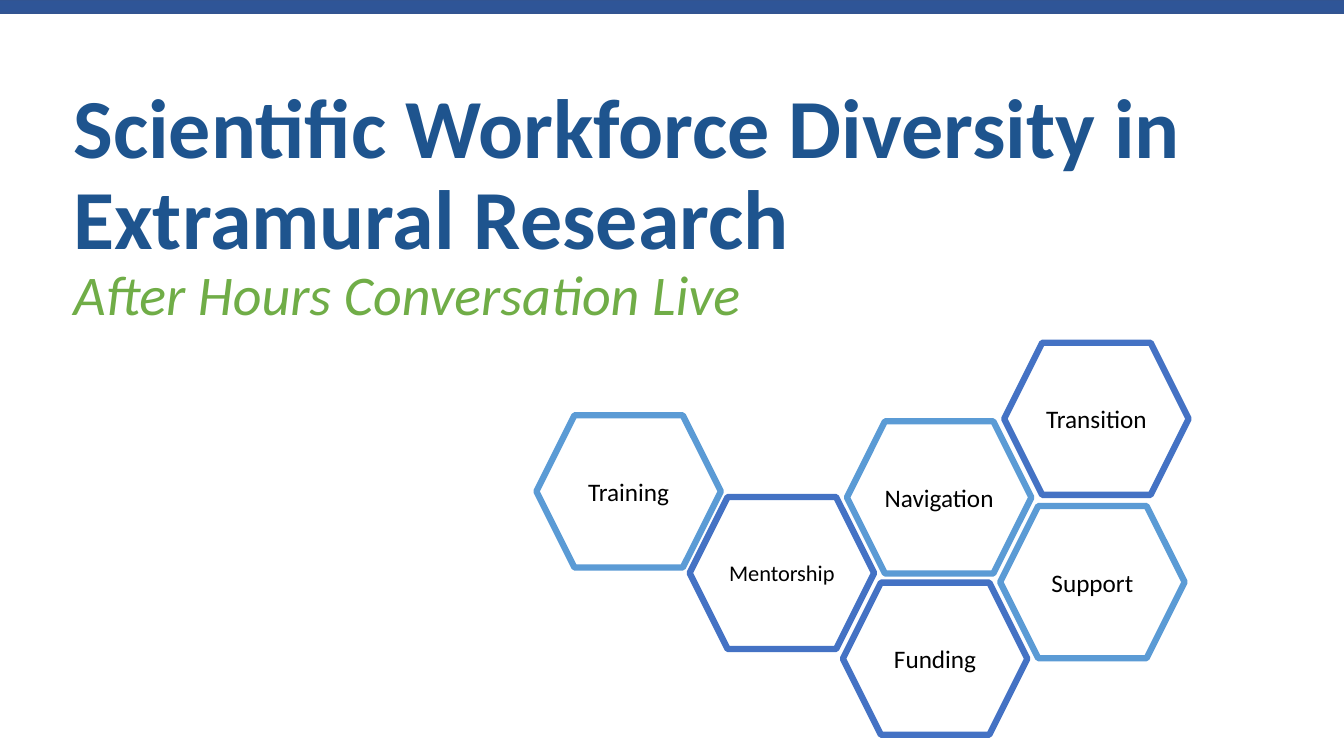
import pptx
import pptx.dml.color
import pptx.enum.shapes
import pptx.enum.text
import pptx.util

Inches, Pt = pptx.util.Inches, pptx.util.Pt
RGBColor = pptx.dml.color.RGBColor
MSO_SHAPE = pptx.enum.shapes.MSO_SHAPE
MSO_ANCHOR = pptx.enum.text.MSO_ANCHOR

BAND_FILL = RGBColor(0x2F, 0x55, 0x97)
BAND_LINE = RGBColor(0x32, 0x54, 0x91)
TITLE_BLUE = RGBColor(0x1E, 0x54, 0x8E)
GREEN = RGBColor(0x70, 0xAD, 0x47)
LIGHT_BLUE = RGBColor(0x5B, 0x9B, 0xD5)
DARK_BLUE = RGBColor(0x44, 0x72, 0xC4)
WHITE = RGBColor(0xFF, 0xFF, 0xFF)
BLACK = RGBColor(0, 0, 0)

prs = pptx.Presentation()
prs.slide_width, prs.slide_height = Inches(13.33), Inches(7.5)
s = prs.slides.add_slide(prs.slide_layouts[6])

# Band along the top edge
band = s.shapes.add_shape(MSO_SHAPE.RECTANGLE, Inches(-0.02), Inches(0),
                          Inches(13.39), Inches(0.13))
band.shadow.inherit = False
band.fill.solid()
band.fill.fore_color.rgb = BAND_FILL
band.line.color.rgb = BAND_LINE
band.line.width = Pt(1)

# Title and subtitle, one paragraph with a line break
title = s.shapes.add_textbox(Inches(0.63), Inches(0.58), Inches(11.31), Inches(2.72))
tf = title.text_frame
tf.word_wrap = True
tf.vertical_anchor = MSO_ANCHOR.BOTTOM
p = tf.paragraphs[0]
p.text = "Scientific Workforce Diversity in Extramural Research\vAfter Hours Conversation Live"
p.line_spacing = 0.9
main_run, subtitle_run = p.runs
for r, size, color in ((main_run, 60, TITLE_BLUE), (subtitle_run, 40, GREEN)):
    r.font.name = "Calibri"
    r.font.size = Pt(size)
    r.font.color.rgb = color
main_run.font.bold = True
subtitle_run.font.italic = True

# Honeycomb of topics: label, left, top, outline, text size
topics = [
    ("Training", 5.32, 4.12, LIGHT_BLUE, 18),
    ("Mentorship", 6.84, 4.93, DARK_BLUE, 16),
    ("Support", 9.92, 5.02, LIGHT_BLUE, 18),
    ("Transition", 9.96, 3.4, DARK_BLUE, 18),
    ("Navigation", 8.4, 4.18, LIGHT_BLUE, 18),
    ("Funding", 8.36, 5.78, DARK_BLUE, 18),
]
for label, left, top, outline, size in topics:
    sp = s.shapes.add_shape(MSO_SHAPE.HEXAGON, Inches(left), Inches(top),
                            Inches(1.83), Inches(1.51))
    sp.shadow.inherit = False
    if label == "Navigation":
        sp.fill.background()
    else:
        sp.fill.solid()
        sp.fill.fore_color.rgb = WHITE
    sp.line.color.rgb = outline
    sp.line.width = Pt(4.5)
    tf = sp.text_frame
    tf.margin_left = tf.margin_right = 0
    tf.vertical_anchor = MSO_ANCHOR.MIDDLE
    tf.text = label
    p = tf.paragraphs[0]
    p.alignment = pptx.enum.text.PP_ALIGN.CENTER
    r = p.runs[0]
    r.font.name = "Calibri"
    r.font.size = Pt(size)
    r.font.color.rgb = BLACK

prs.save("out.pptx")
